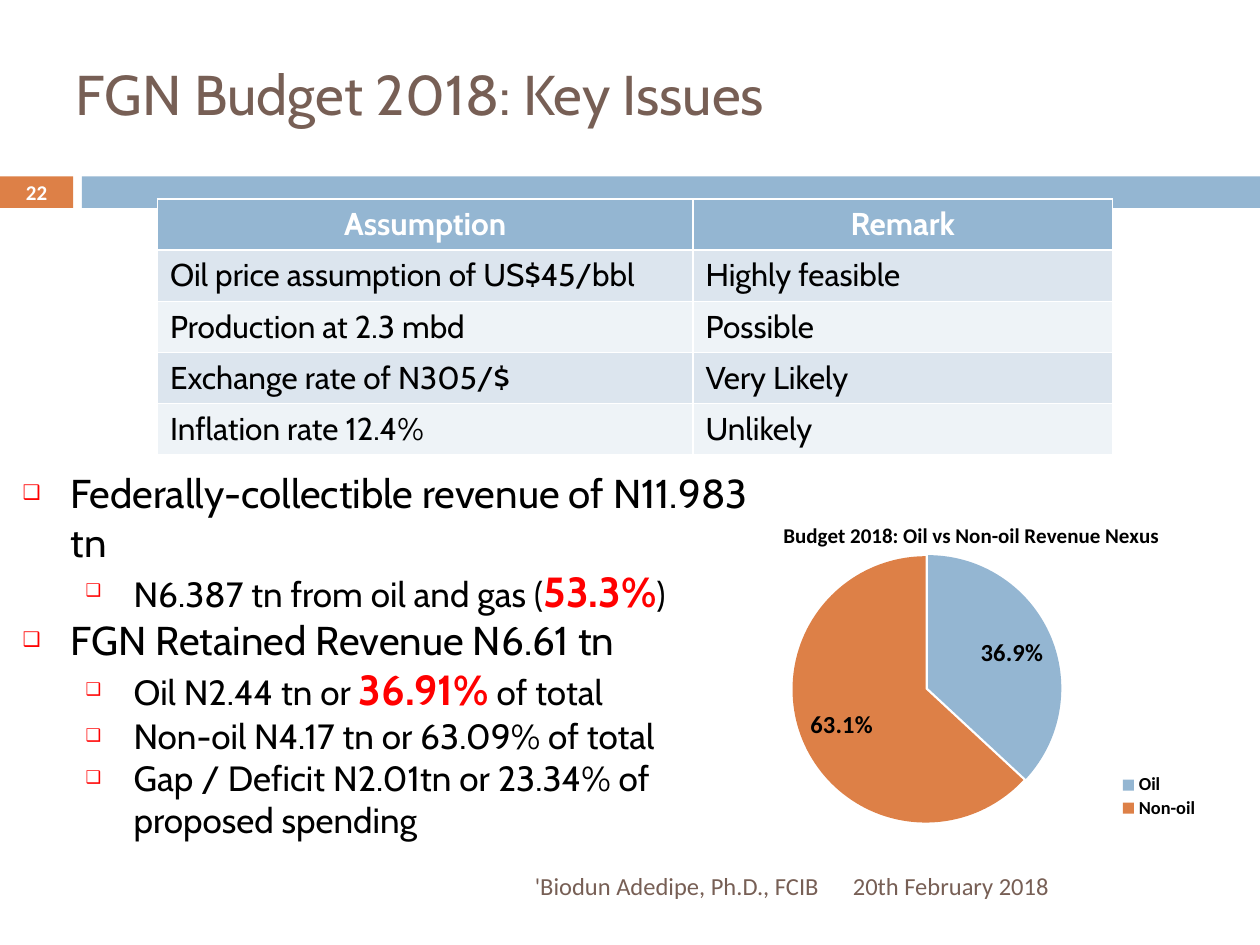
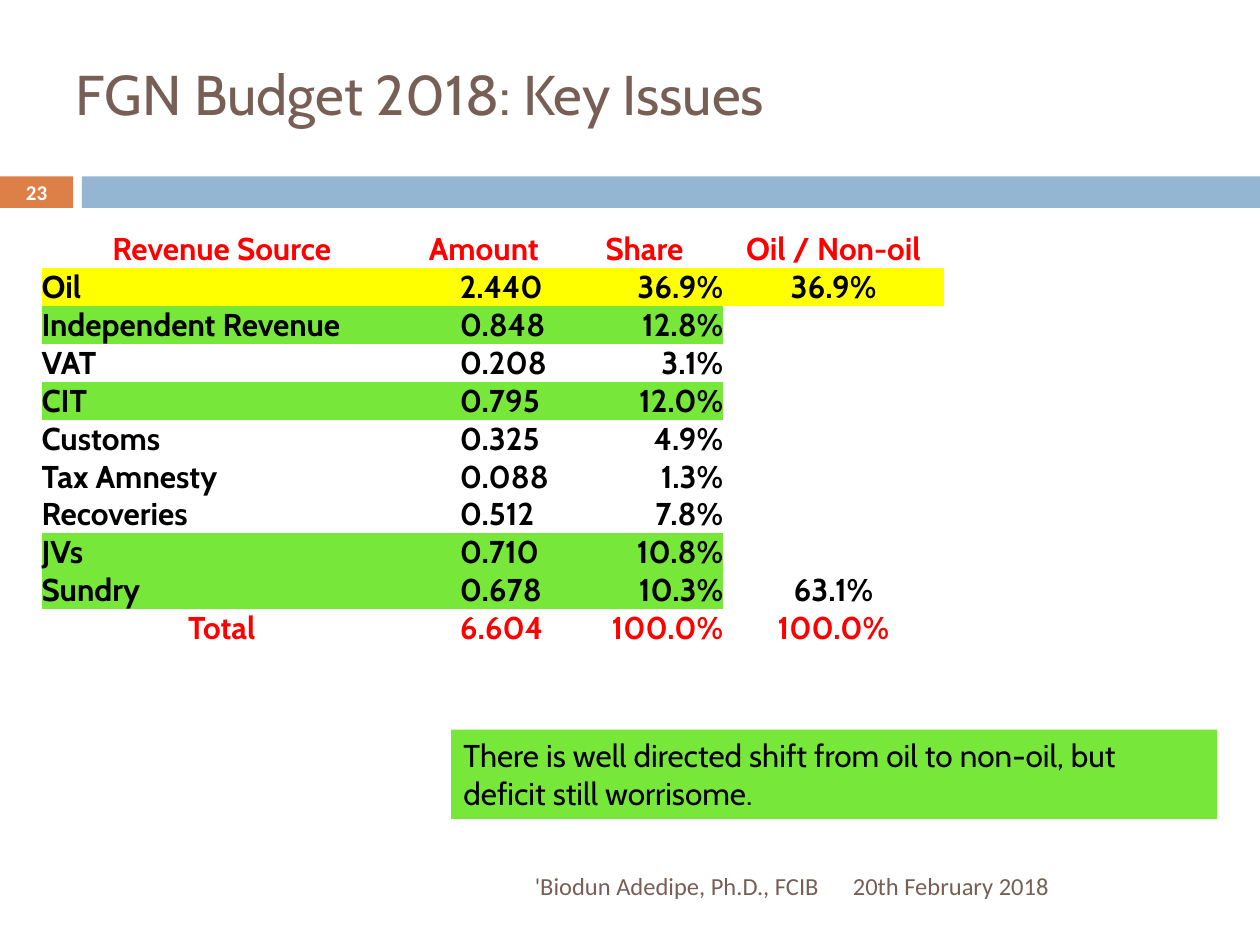
"""Build two budget slides: assumptions with a revenue pie, and revenue by source."""
from lxml.etree import SubElement
from pptx import Presentation
from pptx.chart.data import CategoryChartData
from pptx.dml.color import RGBColor
from pptx.enum.chart import XL_CHART_TYPE, XL_LABEL_POSITION, XL_LEGEND_POSITION
from pptx.enum.shapes import MSO_SHAPE
from pptx.enum.text import MSO_ANCHOR, MSO_AUTO_SIZE, PP_ALIGN
from pptx.oxml.ns import qn
from pptx.util import Inches, Pt

ORANGE = RGBColor(0xDD, 0x80, 0x47)
BLUE = RGBColor(0x94, 0xB6, 0xD2)
BROWN = RGBColor(0x77, 0x5F, 0x55)
WHITE = RGBColor(0xFF, 0xFF, 0xFF)
BLACK = RGBColor(0, 0, 0)
RED = RGBColor(0xFF, 0, 0)
YELLOW = RGBColor(0xFF, 0xFF, 0)
GREEN = RGBColor(0x77, 0xE7, 0x39)
DARK_ROW = RGBColor(0xDC, 0xE5, 0xEE)
LIGHT_ROW = RGBColor(0xEE, 0xF3, 0xF7)
LEFT, CENTER, RIGHT = PP_ALIGN.LEFT, PP_ALIGN.CENTER, PP_ALIGN.RIGHT
NO_STYLE_NO_GRID = "{2D5ABB26-0587-4C30-8999-92F81FD0307C}"


def write(frame, text, size, color, bold=False, align=LEFT, name="Cabin"):
    """Put one formatted paragraph into a text frame."""
    frame.word_wrap = True
    paragraph = frame.paragraphs[0]
    paragraph.text = text
    paragraph.alignment = align
    font = paragraph.font
    font.name, font.size, font.bold = name, Pt(size), bold
    font.color.rgb = color


def place(parent, index, **values):
    """Give a chart part a manual layout, as fractions of the chart."""
    for layout in parent.findall(qn("c:layout")):
        parent.remove(layout)
    layout = SubElement(parent, qn("c:layout"))
    parent.insert(index, layout)
    manual = SubElement(layout, qn("c:manualLayout"))
    for tag, value in values.items():
        SubElement(manual, qn(f"c:{tag}")).set("val", str(value))


presentation = Presentation()
presentation.slide_width, presentation.slide_height = Inches(10), Inches(7.5)
layouts = presentation.slide_layouts
assumptions_slide = presentation.slides.add_slide(layouts[1])
revenue_slide = presentation.slides.add_slide(layouts[5])

for number, slide in enumerate((assumptions_slide, revenue_slide), 22):
    for left, width, color in ((0, 0.58, ORANGE), (0.65, 9.35, BLUE)):
        band = slide.shapes.add_shape(
            MSO_SHAPE.RECTANGLE, Inches(left), Inches(1.4), Inches(width), Inches(0.25))
        band.shadow.inherit = False
        band.fill.solid()
        band.fill.fore_color.rgb = color
        band.line.fill.background()
    for left, top, width, height, text, size, color, bold, align in (
        (6.67, 6.83, 2.92, 0.4, "20th February 2018", 14, BROWN, False, LEFT),
        (0.67, 6.83, 5.93, 0.4, "'Biodun Adedipe, Ph.D., FCIB", 14, BROWN, False, RIGHT),
        (0, 1.39, 0.58, 0.27, str(number), 12, WHITE, True, CENTER),
    ):
        box = slide.shapes.add_textbox(Inches(left), Inches(top), Inches(width), Inches(height))
        box.text_frame.vertical_anchor = MSO_ANCHOR.MIDDLE
        write(box.text_frame, text, size, color, bold, align, "Calibri")
    title = slide.shapes.title
    title.left, title.top, title.width, title.height = map(Inches, (0.5, 0.42, 8.75, 0.75))
    title.text_frame.vertical_anchor = MSO_ANCHOR.TOP
    title.text_frame.auto_size = MSO_AUTO_SIZE.NONE
    write(title.text_frame, "FGN Budget 2018: Key Issues", 32, BROWN)

body = assumptions_slide.placeholders[1]
body.left, body.top, body.width, body.height = map(Inches, (0.08, 3.67, 6.17, 3.08))
body.text_frame.auto_size = MSO_AUTO_SIZE.NONE
revenue_points = [
    (0, "Federally-collectible revenue of N11.983 tn", "", ""),
    (1, "N6.387 tn from oil and gas (", "53.3%", ")"),
    (0, "FGN Retained Revenue N6.61 tn", "", ""),
    (1, "Oil N2.44 tn or ", "36.91%", " of total"),
    (1, "Non-oil N4.17 tn or 63.09% of total", "", ""),
    (1, "Gap / Deficit N2.01tn or 23.34% of proposed spending", "", ""),
]
for index, (level, before, highlight, after) in enumerate(revenue_points):
    paragraph = body.text_frame.paragraphs[0] if index == 0 else body.text_frame.add_paragraph()
    paragraph.level = level
    properties = paragraph._p.get_or_add_pPr()
    properties.set("marL", str(Inches(0.38 + 0.5 * level)))
    properties.set("indent", str(Inches(-0.38)))
    bullet_color = SubElement(properties, qn("a:buClr"))
    SubElement(bullet_color, qn("a:srgbClr")).set("val", str(RED))
    SubElement(properties, qn("a:buSzPct")).set("val", "50000")
    SubElement(properties, qn("a:buChar")).set("char", "❑")
    paragraph.space_before = Pt(0)
    paragraph.font.name = "Cabin"
    paragraph.font.size = Pt(20 if level else 23)
    paragraph.font.color.rgb = BLACK
    for text in filter(None, (before, highlight, after)):
        run = paragraph.add_run()
        run.text = text
        if text == highlight:
            run.font.size, run.font.bold = Pt(24), True
            run.font.color.rgb = RED

assumptions = [
    ("Assumption", "Remark"),
    ("Oil price assumption of US$45/bbl", "Highly feasible"),
    ("Production at 2.3 mbd", "Possible"),
    ("Exchange rate of N305/$", "Very Likely"),
    ("Inflation rate 12.4%", "Unlikely"),
]
assumption_table = assumptions_slide.shapes.add_table(
    len(assumptions), 2, Inches(1.25), Inches(1.58), Inches(7.58), Inches(2.03)).table
for column, width in zip(assumption_table.columns, (4.25, 3.33)):
    column.width = Inches(width)
for row, texts in enumerate(assumptions):
    header = row == 0
    for column, text in enumerate(texts):
        cell = assumption_table.cell(row, column)
        cell.fill.solid()
        cell.fill.fore_color.rgb = BLUE if header else DARK_ROW if row % 2 else LIGHT_ROW
        write(cell.text_frame, text, 18, WHITE if header else BLACK, header,
              CENTER if header else LEFT)

chart_data = CategoryChartData(number_format="0.0%")
chart_data.categories = ["Oil", "Non-oil"]
chart_data.add_series("Series 1", (0.369, 0.631))
chart = assumptions_slide.shapes.add_chart(
    XL_CHART_TYPE.PIE, Inches(5.75), Inches(4), Inches(3.92), Inches(2.67), chart_data).chart
chart.font.name, chart.font.size = "Calibri", Pt(10)
chart.font.color.rgb = BLACK
write(chart.chart_title.text_frame, "Budget 2018: Oil vs Non-oil Revenue Nexus",
      12, BLACK, True, CENTER, "Calibri")
chart.has_legend = True
legend = chart.legend
legend.position = XL_LEGEND_POSITION.RIGHT
legend.include_in_layout = False
legend.font.size, legend.font.bold = Pt(10.5), True
place(legend._element, 1, xMode="edge", yMode="edge", x=0.79, y=0.8, w=0.18, h=0.14)
pie = chart.plots[0]
pie.vary_by_categories = True
place(chart._chartSpace.chart.plotArea, 0, layoutTarget="inner", xMode="edge", yMode="edge",
      x=0.06, y=0.15, w=0.7, h=0.8)
series = pie.series[0]
for index, color in enumerate((BLUE, ORANGE)):
    fill = series.points[index].format.fill
    fill.solid()
    fill.fore_color.rgb = color
explosion = SubElement(series._element, qn("c:explosion"))
explosion.set("val", "1")
series._element.find(qn("c:dPt")).addprevious(explosion)
labels = series.data_labels
labels.show_value = True
labels.show_percentage = False
labels.position = XL_LABEL_POSITION.INSIDE_END
labels.number_format, labels.number_format_is_linked = "0.0%", False
labels.font.size, labels.font.bold = Pt(14), True

revenues = [
    ("Revenue Source", "Amount", "Share", "Oil / Non-oil"),
    ("Oil", "2.440", "36.9%", "36.9%"),
    ("Independent Revenue", "0.848", "12.8%", ""),
    ("VAT", "0.208", "3.1%", ""),
    ("CIT", "0.795", "12.0%", ""),
    ("Customs", "0.325", "4.9%", ""),
    ("Tax Amnesty", "0.088", "1.3%", ""),
    ("Recoveries", "0.512", "7.8%", ""),
    ("JVs", "0.710", "10.8%", ""),
    ("Sundry", "0.678", "10.3%", "63.1%"),
    ("Total", "6.604", "100.0%", "100.0%"),
]
row_fills = {"Oil": YELLOW, **dict.fromkeys(("Independent Revenue", "CIT", "JVs", "Sundry"), GREEN)}
revenue_table = revenue_slide.shapes.add_table(
    len(revenues), 4, Inches(0.33), Inches(1.83), Inches(7.17), Inches(3.3)).table
revenue_table.first_row = revenue_table.horz_banding = False
revenue_table._tbl.tblPr.find(qn("a:tableStyleId")).text = NO_STYLE_NO_GRID
for column, width in zip(revenue_table.columns, (2.86, 1.3, 1.25, 1.75)):
    column.width = Inches(width)
for row, texts in enumerate(revenues):
    source = texts[0]
    color = RED if source in ("Revenue Source", "Total") else BLACK
    alignments = [CENTER] * 4 if row == 0 else [LEFT, LEFT, RIGHT, CENTER]
    if source == "Total":
        alignments[0] = CENTER
    for column, (text, align) in enumerate(zip(texts, alignments)):
        cell = revenue_table.cell(row, column)
        cell.margin_left = cell.margin_right = cell.margin_top = cell.margin_bottom = 0
        if column == 1 and row > 0:
            cell.margin_left = Inches(0.46)
        cell.vertical_anchor = MSO_ANCHOR.BOTTOM
        if source in row_fills and (column < 3 or source == "Oil"):
            cell.fill.solid()
            cell.fill.fore_color.rgb = row_fills[source]
        else:
            cell.fill.background()
        write(cell.text_frame, text, 18, color, True, align)

conclusion = revenue_slide.shapes.add_textbox(
    Inches(3.58), Inches(5.79), Inches(6.08), Inches(0.71))
conclusion.fill.solid()
conclusion.fill.fore_color.rgb = GREEN
write(conclusion.text_frame,
      "There is well directed shift from oil to non-oil, but deficit still worrisome.", 18, BLACK)

presentation.save("out.pptx")
